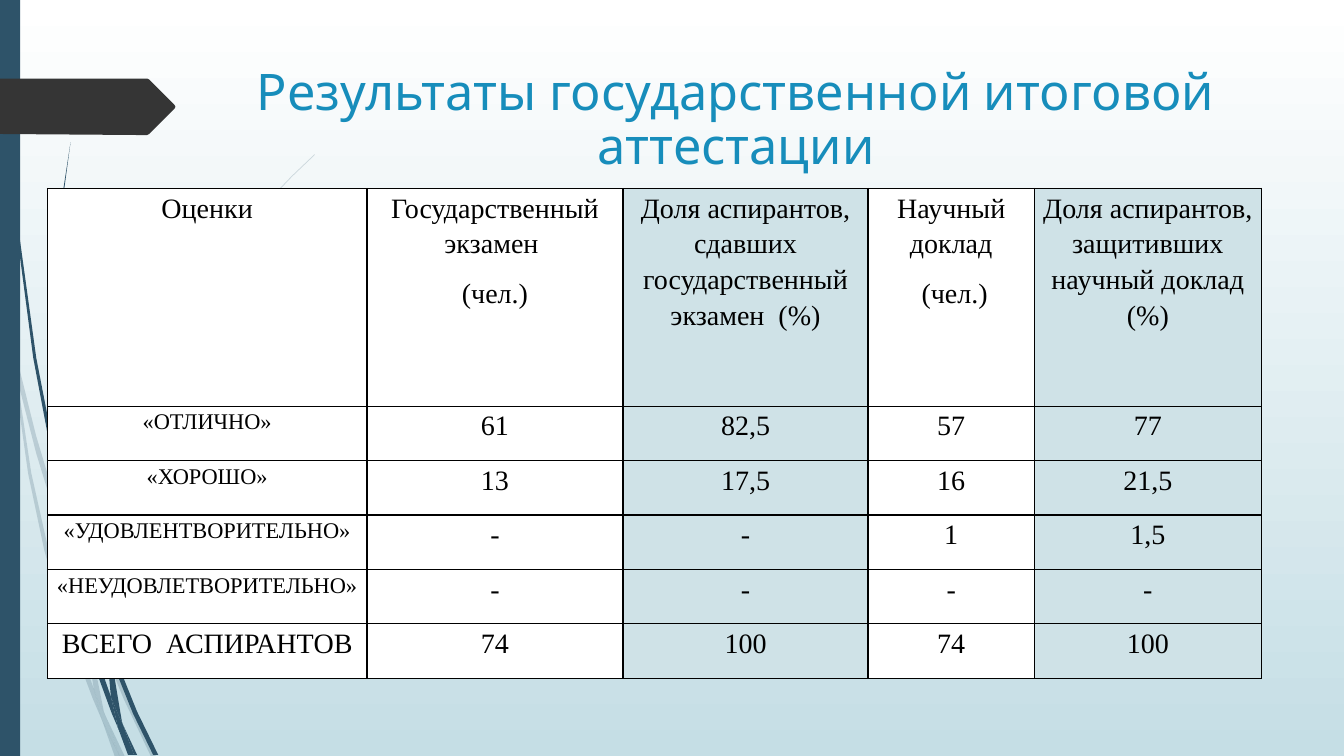
from dataclasses import dataclass

from lxml import etree
from pptx import Presentation
from pptx.dml.color import RGBColor as Rgb
from pptx.enum.shapes import MSO_SHAPE as Preset
from pptx.enum.text import MSO_ANCHOR as Anchor, PP_ALIGN as Align
from pptx.oxml.ns import qn
from pptx.util import Inches, Pt

COLORS = {
    "white": "FFFFFF", "mist": "C5DEE5", "slate": "2E5369", "tag": "353535",
    "heading": "178DBB", "share": "CFE2E7", "black": "000000",
}
Point = tuple[float, float]


@dataclass(frozen=True)
class Outline:
    points: tuple[Point, ...]
    color: str
    opacity: int = 100


@dataclass(frozen=True)
class TextStyle:
    size: int
    font: str
    color: str
    spacing: float
    after: int = 0


# Decorative grass: a pale tuft behind a solid one
PALE_TUFT = (
    ((0.11, 3.5), (0.09, 3.22), (0, 2.82), (0, 2.99), (0.1, 3.44)),
    ((0.58, 5.22), (0.84, 5.99), (0.85, 5.86), (0.62, 5.2), (0.36, 4.33), (0.14, 3.45),
     (0.17, 3.76), (0.36, 4.5)),
    ((0.92, 6.07), (0.88, 5.96), (0.88, 6.1), (1.23, 6.94), (1.5, 7.51), (1.55, 7.51), (1.27, 6.92)),
    ((1.19, 7.51), (1.24, 7.51), (1.05, 7.11)),
    ((0.93, 6.83), (0.7, 6.19), (0.48, 5.45), (0.31, 4.69), (0.17, 3.76), (0.11, 3.5), (0.28, 4.7),
     (0.44, 5.46), (0.65, 6.21), (0.92, 6.93), (1.01, 7.14), (0.99, 7.07)),
    ((0.84, 5.99), (0.87, 6.46), (0.93, 6.83), (0.96, 6.92), (1.05, 7.11), (1.03, 7.06), (0.91, 6.46),
     (0.88, 6.1), (0.88, 6.08)),
    ((0.88, 5.84), (0.95, 5.22), (1.1, 4.62), (1.32, 4.04), (1.6, 3.49), (1.92, 2.95), (2.29, 2.45),
     (2.68, 1.98), (2.9, 1.75), (3.12, 1.54), (3.12, 1.53), (2.89, 1.75), (2.68, 1.97), (2.28, 2.44),
     (1.9, 2.94), (1.58, 3.48), (1.29, 4.03), (1.07, 4.61), (0.91, 5.22), (0.85, 5.84), (0.85, 5.86),
     (0.88, 5.96)),
    ((1.01, 7.14), (1.14, 7.51), (1.19, 7.51)),
    ((0.88, 6.08), (0.88, 6.1), (0.88, 5.96), (0.85, 5.86), (0.84, 5.99)),
    ((0.96, 6.92), (0.93, 6.83), (0.99, 7.07), (1.01, 7.14), (1.19, 7.51), (1.05, 7.11)),
)
SOLID_TUFT = (
    ((0.07, 1.1), (0.17, 2.33), (0.33, 3.55), (0.56, 4.77), (0.57, 4.81), (0.55, 4.57), (0.55, 4.53),
     (0.36, 3.55), (0.19, 2.32), (0.08, 1.09), (0.05, 0.48), (0.04, 0), (0.03, 0), (0.04, 0.48)),
    ((0.88, 5.92), (1.06, 6.45), (1.06, 6.33), (1.06, 6.31), (0.93, 5.9), (0.75, 5.32), (0.6, 4.72),
     (0.64, 5.05)),
    ((1.13, 6.49), (1.1, 6.41), (1.11, 6.56), (1.32, 7.08), (1.52, 7.49), (1.57, 7.49), (1.36, 7.06)),
    ((1.1, 6.91), (0.98, 6.57), (0.84, 6.07), (0.72, 5.56), (0.64, 5.05), (0.57, 4.77), (0.68, 5.57),
     (0.79, 6.08), (0.93, 6.59), (1.11, 7.08), (1.17, 7.22), (1.16, 7.17)),
    ((0.6, 4.72), (0.58, 4.53), (0.54, 3.49), (0.58, 2.45), (0.63, 1.93), (0.7, 1.41), (0.62, 1.93),
     (0.56, 2.45), (0.52, 3.49), (0.55, 4.49)),
    ((1.33, 7.49), (1.36, 7.49), (1.22, 7.19)),
    ((0.57, 4.77), (0.64, 5.05), (0.6, 4.72), (0.55, 4.49), (0.55, 4.53)),
    ((1.11, 6.33), (1.15, 5.92), (1.25, 5.52), (1.4, 5.13), (1.58, 4.76), (1.8, 4.4), (2.05, 4.06),
     (2.31, 3.74), (2.45, 3.59), (2.61, 3.44), (2.6, 3.44), (2.45, 3.58), (2.31, 3.73), (2.04, 4.05),
     (1.78, 4.39), (1.56, 4.74), (1.37, 5.12), (1.22, 5.51), (1.11, 5.91), (1.06, 6.31), (1.1, 6.41)),
    ((1.17, 7.22), (1.27, 7.49), (1.31, 7.49)),
    ((1.06, 6.45), (1.1, 6.91), (1.16, 7.06), (1.22, 7.19), (1.21, 7.16), (1.11, 6.56), (1.09, 6.51)),
    ((1.06, 6.45), (1.09, 6.51), (1.11, 6.56), (1.1, 6.41), (1.06, 6.31), (1.06, 6.33)),
    ((1.16, 7.06), (1.1, 6.91), (1.16, 7.17), (1.17, 7.22), (1.3, 7.49), (1.33, 7.49), (1.22, 7.19)),
)
PAGE_TAG = ((1.73, 1.08), (1.48, 1.33), (1.46, 1.34), (1.36, 1.34), (0, 1.33), (0, 0.78),
            (1.46, 0.78), (1.48, 0.79), (1.73, 1.04), (1.74, 1.06))

# Grades table; a line break inside a cell starts a new paragraph
COLUMN_WIDTHS = (3.17, 2.54, 2.43, 1.65, 2.25)
ROW_HEIGHTS = (2.16,) + (0.54,) * 5
SHARE_COLUMNS = (2, 4)
GRADES = (
    ("Оценки", "Государственный экзамен \n(чел.)",
     "Доля аспирантов, сдавших государственный экзамен  (%)", "Научный доклад\n (чел.)",
     "Доля аспирантов, защитивших научный доклад (%)"),
    ("«ОТЛИЧНО»", "61", "82,5", "57", "77"),
    ("«ХОРОШО»", "13", "17,5", "16", "21,5"),
    ("«УДОВЛЕНТВОРИТЕЛЬНО»", "-", "-", "1", "1,5"),
    ("«НЕУДОВЛЕТВОРИТЕЛЬНО»", "-", "-", "-", "-"),
    ("ВСЕГО  АСПИРАНТОВ", "74", "100", "74", "100"),
)
HEADING = TextStyle(36, "League Spartan", "heading", 0.9)
FIGURE = TextStyle(20, "Times New Roman", "black", 1.15, 10)
GRADE_NAME = TextStyle(16, "Times New Roman", "black", 1.15, 10)


def rgb(name: str) -> Rgb:
    return Rgb.from_string(COLORS[name])


def paint(shape, color: str, opacity: int = 100) -> None:
    shape.shadow.inherit = False
    shape.fill.solid()
    shape.fill.fore_color.rgb = rgb(color)
    shape.line.fill.background()
    if opacity < 100:
        tint = shape.fill._xPr.find(f".//{qn('a:srgbClr')}")
        etree.SubElement(tint, qn("a:alpha"), val=str(opacity * 1000))


def draw_outline(slide, outline: Outline) -> None:
    start, *rest = [(Inches(x), Inches(y)) for x, y in outline.points]
    builder = slide.shapes.build_freeform(*start)
    builder.add_line_segments(rest, close=True)
    paint(builder.convert_to_shape(), outline.color, outline.opacity)


def write(frame, text: str, style: TextStyle) -> None:
    for index, line in enumerate(text.split("\n")):
        paragraph = frame.add_paragraph() if index else frame.paragraphs[0]
        paragraph.alignment = Align.CENTER
        paragraph.line_spacing = style.spacing
        paragraph.space_after = Pt(style.after)
        run = paragraph.add_run()
        run.text = line
        run.font.size = Pt(style.size)
        run.font.name = style.font
        run.font.color.rgb = rgb(style.color)


def border(cell) -> None:
    properties = cell._tc.get_or_add_tcPr()
    for position, side in enumerate(("a:lnL", "a:lnR", "a:lnT", "a:lnB")):
        edge = etree.Element(qn(side), w=str(Pt(1)))
        fill = etree.SubElement(edge, qn("a:solidFill"))
        etree.SubElement(fill, qn("a:srgbClr"), val=COLORS["black"])
        properties.insert(position, edge)


def draw_grades(slide) -> None:
    table = slide.shapes.add_table(
        len(ROW_HEIGHTS), len(COLUMN_WIDTHS), Inches(0.47), Inches(1.87),
        Inches(sum(COLUMN_WIDTHS)), Inches(sum(ROW_HEIGHTS))).table
    table.first_row = table.horz_banding = False
    for column, width in zip(table.columns, COLUMN_WIDTHS):
        column.width = Inches(width)
    for row, height in zip(table.rows, ROW_HEIGHTS):
        row.height = Inches(height)
    for r, row_texts in enumerate(GRADES):
        for c, text in enumerate(row_texts):
            cell = table.cell(r, c)
            cell.margin_left = cell.margin_right = Inches(0.07)
            cell.margin_top = cell.margin_bottom = 0
            cell.fill.solid()
            cell.fill.fore_color.rgb = rgb("share" if c in SHARE_COLUMNS else "white")
            border(cell)
            write(cell.text_frame, text, GRADE_NAME if c == 0 and 1 <= r <= 4 else FIGURE)


def main() -> None:
    deck = Presentation()
    deck.slide_width, deck.slide_height = Inches(13.33), Inches(7.5)
    slide = deck.slides.add_slide(deck.slide_layouts[6])

    # Background
    backdrop = slide.background.fill
    backdrop.gradient()
    backdrop.gradient_angle = 270
    for stop, color, position in zip(backdrop.gradient_stops, ("white", "mist"), (0, 1)):
        stop.color.rgb = rgb(color)
        stop.position = position

    # Grass, side band and page tag
    for blade in PALE_TUFT:
        draw_outline(slide, Outline(blade, "slate", 20))
    for blade in SOLID_TUFT:
        draw_outline(slide, Outline(blade, "slate"))
    band = slide.shapes.add_shape(Preset.RECTANGLE, 0, 0, Inches(0.2), deck.slide_height)
    paint(band, "slate")
    draw_outline(slide, Outline(PAGE_TAG, "tag"))

    # Heading
    heading = slide.shapes.add_textbox(Inches(2.1), Inches(0.5), Inches(10.4), Inches(1.4)).text_frame
    heading.word_wrap = True
    heading.vertical_anchor = Anchor.MIDDLE
    write(heading, "Результаты государственной итоговой аттестации", HEADING)

    draw_grades(slide)
    deck.save("out.pptx")


if __name__ == "__main__":
    main()
